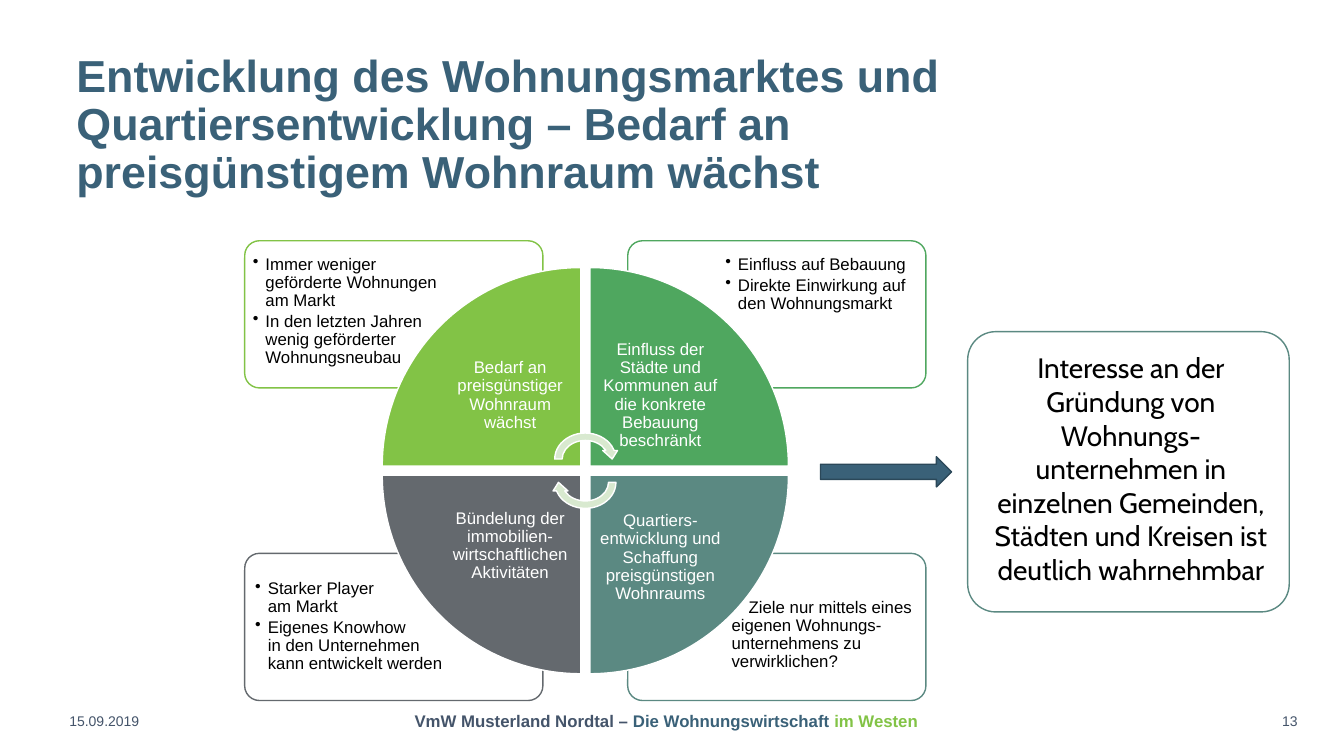
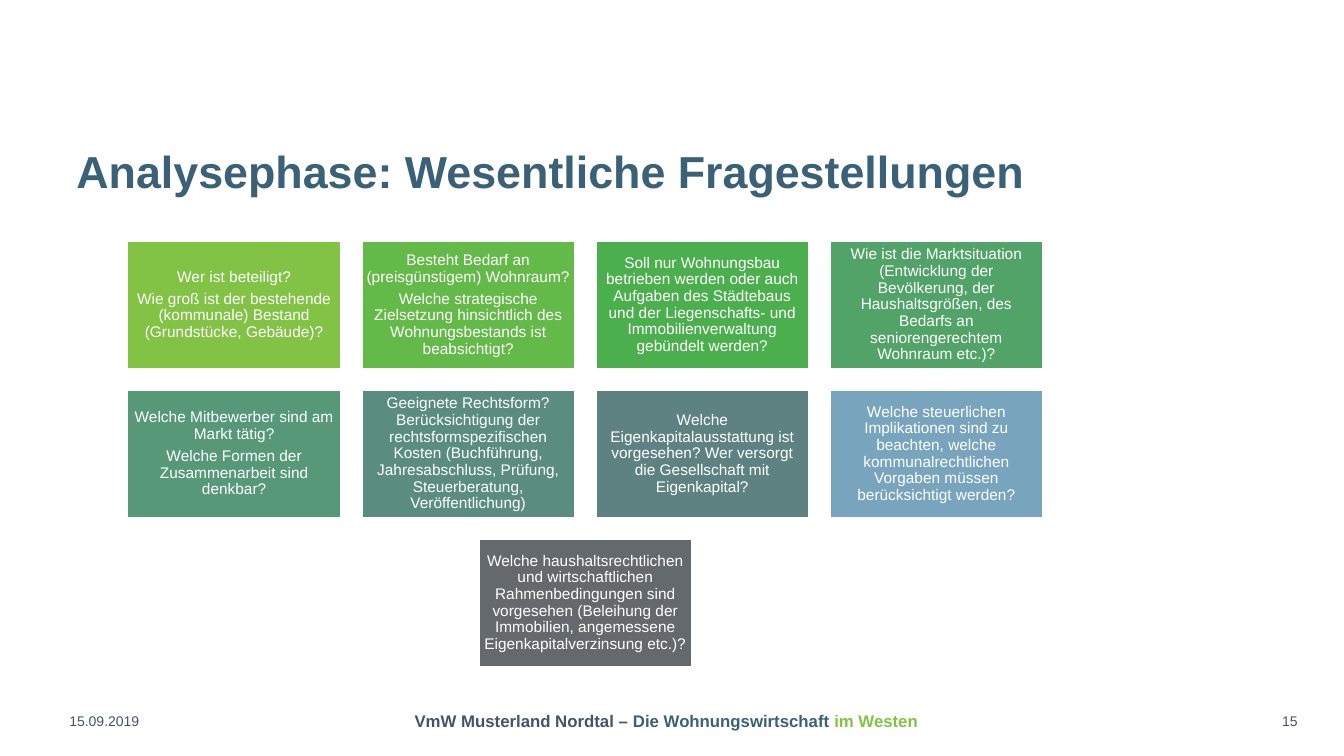
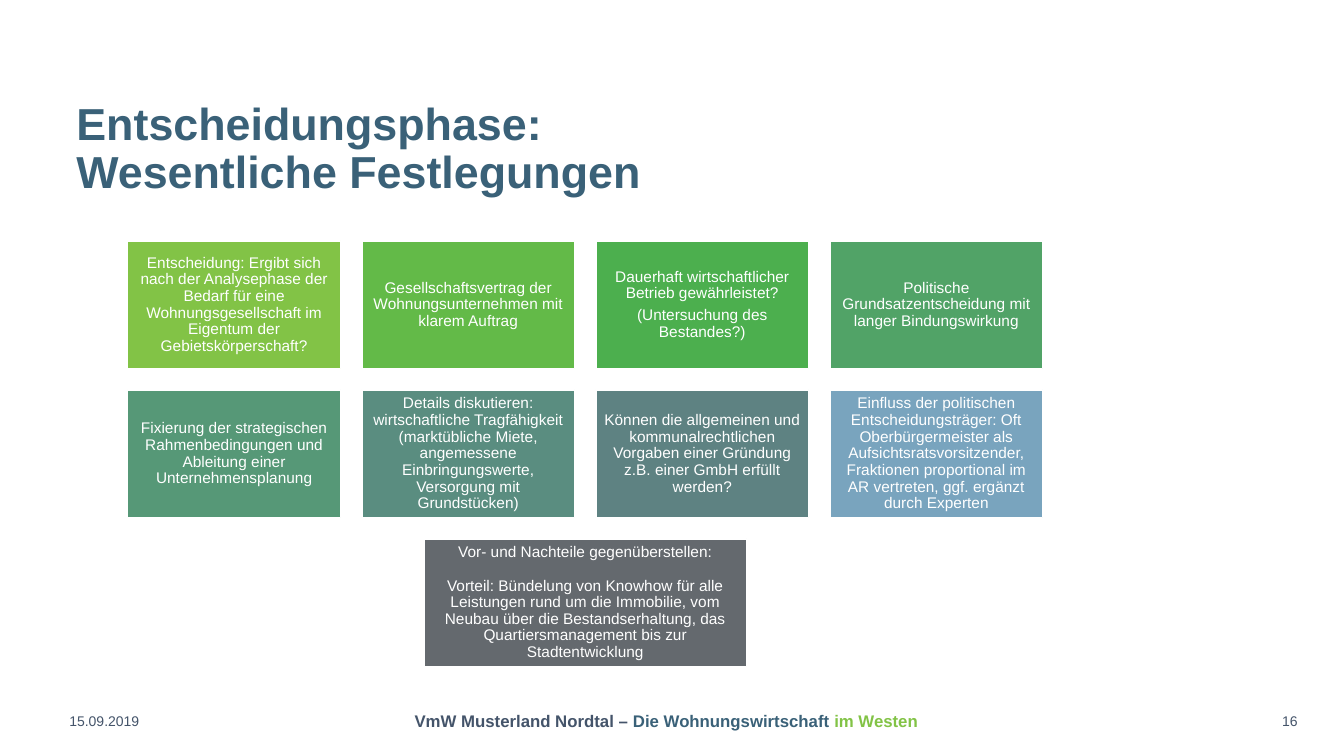
"""Three slides on founding municipal housing companies."""
from copy import deepcopy
from dataclasses import dataclass
from typing import NamedTuple

from lxml.etree import SubElement
from pptx import Presentation
from pptx.dml.color import RGBColor
from pptx.enum.shapes import MSO_SHAPE
from pptx.enum.text import MSO_ANCHOR, PP_ALIGN
from pptx.oxml.ns import qn
from pptx.util import Pt

COLORS = {
    "white": "FFFFFF",
    "black": "000000",
    "slate": "44546A",
    "petrol": "3A6178",
    "petrol_dark": "2B4859",
    "lime": "82C346",
    "leaf": "63BA48",
    "grass": "4CAF4E",
    "green": "4FA75F",
    "fern": "51A367",
    "jade": "569877",
    "sea": "5A8D80",
    "teal": "5B8982",
    "lagoon": "5E8282",
    "sky": "79A4BE",
    "grey": "64696E",
    "mint": "D8E9CF",
}
CARD_COLORS = ("lime", "leaf", "grass", "fern", "jade", "sea", "lagoon", "sky", "grey")
FOOTER_PARTS = (
    ("VmW Musterland Nordtal – ", "slate"),
    ("Die Wohnungswirtschaft ", "petrol"),
    ("im Westen", "lime"),
)
CENTER_X, CENTER_Y = 418.1, 336.2
FOOTER_TOP, FOOTER_HEIGHT = 500.4, 28.8
CARD_WIDTH, CARD_HEIGHT, CARD_GAP, CARD_TOP = 152, 91.2, 15.2, 172.1
CARD_COLUMNS = 4


class Box(NamedTuple):
    """Position and size in points."""

    left: float
    top: float
    width: float
    height: float


class Insets(NamedTuple):
    """Text margins in points."""

    left: float = 7.2
    top: float = 3.6
    right: float = 7.2
    bottom: float = 3.6


@dataclass(frozen=True)
class TextStyle:
    """Look of a text and its paragraphs."""

    size: float
    color: str
    bold: bool = False
    font: str = "Arial"
    align: PP_ALIGN = PP_ALIGN.LEFT
    anchor: MSO_ANCHOR = MSO_ANCHOR.MIDDLE
    line_spacing: float = 1.0
    space_after: float = 0
    margin: float = 0
    indent: float = 0
    bullet: bool = False


@dataclass(frozen=True)
class Quadrant:
    """One wedge of the circle with its label and the note beside it."""

    side_x: int
    side_y: int
    rotation: int
    color: str
    label: str
    notes: tuple[str, ...]
    note_style: TextStyle
    note_insets: Insets
    label_shift: float = 0


@dataclass(frozen=True)
class Card:
    """One question or decision."""

    paragraphs: tuple[str, ...]
    width: float = CARD_WIDTH
    space_after: float = 3.85


TITLE = TextStyle(32, "petrol", bold=True, anchor=MSO_ANCHOR.BOTTOM, line_spacing=0.9)
DATE = TextStyle(10, "slate")
PAGE = TextStyle(10, "slate", align=PP_ALIGN.RIGHT)
LABEL = TextStyle(12, "white", align=PP_ALIGN.CENTER, line_spacing=0.9, space_after=4.2)
CONCLUSION = TextStyle(20, "black", font="Cabin", align=PP_ALIGN.CENTER, anchor=MSO_ANCHOR.TOP)
NOTE_TOP = TextStyle(12, "black", anchor=MSO_ANCHOR.TOP, line_spacing=0.9,
                     space_after=1.8, margin=9, indent=-9, bullet=True)
NOTE_BOTTOM = TextStyle(12, "black", anchor=MSO_ANCHOR.BOTTOM, line_spacing=0.9,
                        space_after=1.8, margin=9, indent=-9, bullet=True)
NOTE_PLAIN = TextStyle(12, "black", anchor=MSO_ANCHOR.TOP, line_spacing=0.9,
                       margin=4.5, indent=12.2)

QUADRANTS = (
    Quadrant(1, 1, 180, "teal",
             "Quartiers-entwicklung und Schaffung preisgünstigen Wohnraums",
             ("Ziele nur mittels eines eigenen Wohnungs-unternehmens zu verwirklichen?",),
             NOTE_PLAIN, Insets(3.6, 3.6, 3.6, 3.6), label_shift=17),
    Quadrant(-1, 1, 270, "grey",
             "Bündelung der immobilien-wirtschaftlichen Aktivitäten",
             ("Starker Player\nam Markt",
              "Eigenes Knowhow\nin den Unternehmen kann entwickelt werden"),
             NOTE_BOTTOM, Insets(5.3, 0, 3.6, 17.3)),
    Quadrant(1, -1, 90, "green",
             "Einfluss der Städte und Kommunen auf die konkrete Bebauung beschränkt",
             ("Einfluss auf Bebauung", "Direkte Einwirkung auf den Wohnungsmarkt"),
             NOTE_TOP, Insets(3.6, 8.6, 3.6, 3.6)),
    Quadrant(-1, -1, 0, "lime",
             "Bedarf an preisgünstiger Wohnraum wächst",
             ("Immer weniger geförderte Wohnungen am Markt",
              "In den letzten Jahren wenig geförderter Wohnungsneubau"),
             NOTE_TOP, Insets(3.6, 8.6, 0, 3.6)),
)

ANALYSIS_CARDS = (
    Card(("Wer ist beteiligt?",
          "Wie groß ist der bestehende (kommunale) Bestand (Grundstücke, Gebäude)?")),
    Card(("Besteht Bedarf an (preisgünstigem) Wohnraum?",
          "Welche strategische Zielsetzung hinsichtlich des Wohnungsbestands ist beabsichtigt?")),
    Card(("Soll nur Wohnungsbau betrieben werden oder auch Aufgaben des Städtebaus und der "
          "Liegenschafts- und Immobilienverwaltung gebündelt werden?",)),
    Card(("Wie ist die Marktsituation (Entwicklung der Bevölkerung, der Haushaltsgrößen, "
          "des Bedarfs an seniorengerechtem Wohnraum etc.)?",)),
    Card(("Welche Mitbewerber sind am Markt tätig?",
          "Welche Formen der Zusammenarbeit sind denkbar?")),
    Card(("Geeignete Rechtsform? Berücksichtigung der rechtsformspezifischen Kosten "
          "(Buchführung, Jahresabschluss, Prüfung, Steuerberatung, Veröffentlichung)",)),
    Card(("Welche Eigenkapitalausstattung ist vorgesehen? Wer versorgt die Gesellschaft "
          "mit Eigenkapital?",)),
    Card(("Welche steuerlichen Implikationen sind zu beachten, welche kommunalrechtlichen "
          "Vorgaben müssen berücksichtigt werden?",)),
    Card(("Welche haushaltsrechtlichen und wirtschaftlichen Rahmenbedingungen sind vorgesehen "
          "(Beleihung der Immobilien, angemessene Eigenkapitalverzinsung etc.)?",)),
)

DECISION_CARDS = (
    Card(("Entscheidung: Ergibt sich nach der Analysephase der Bedarf für eine "
          "Wohnungsgesellschaft im Eigentum der Gebietskörperschaft?",)),
    Card(("Gesellschaftsvertrag der Wohnungsunternehmen mit klarem Auftrag",)),
    Card(("Dauerhaft wirtschaftlicher Betrieb gewährleistet?",
          "(Untersuchung des Bestandes?)")),
    Card(("Politische Grundsatzentscheidung mit langer Bindungswirkung",)),
    Card(("Fixierung der strategischen Rahmenbedingungen und Ableitung einer "
          "Unternehmensplanung",)),
    Card(("Details diskutieren: wirtschaftliche Tragfähigkeit (marktübliche Miete, "
          "angemessene Einbringungswerte, Versorgung mit Grundstücken)",)),
    Card(("Können die allgemeinen und kommunalrechtlichen Vorgaben einer Gründung z.B. "
          "einer GmbH erfüllt werden?",)),
    Card(("Einfluss der politischen Entscheidungsträger: Oft Oberbürgermeister als "
          "Aufsichtsratsvorsitzender, Fraktionen proportional im AR vertreten, "
          "ggf. ergänzt durch Experten",)),
    Card(("Vor- und Nachteile gegenüberstellen:",
          "Vorteil: Bündelung von Knowhow für alle Leistungen rund um die Immobilie, vom "
          "Neubau über die Bestandserhaltung, das Quartiersmanagement bis zur "
          "Stadtentwicklung"), width=230.4, space_after=11.9),
)


def rgb(color: str) -> RGBColor:
    """Return the named colour."""
    return RGBColor.from_string(COLORS[color])


def emu(box: Box) -> list:
    """Return the four lengths of a box for python-pptx."""
    return [Pt(length) for length in box]


def format_run(run, style: TextStyle, color: str) -> None:
    """Give a run its font."""
    run.font.size = Pt(style.size)
    run.font.name = style.font
    run.font.bold = style.bold
    run.font.color.rgb = rgb(color)


def format_paragraph(paragraph, style: TextStyle) -> None:
    """Give a paragraph its spacing, indent and bullet."""
    paragraph.alignment = style.align
    paragraph.line_spacing = style.line_spacing
    paragraph.space_after = Pt(style.space_after)
    properties = paragraph._p.get_or_add_pPr()
    properties.set("marL", str(Pt(style.margin)))
    properties.set("indent", str(Pt(style.indent)))
    if style.bullet:
        SubElement(properties, qn("a:buChar")).set("char", "•")


def prepare_frame(shape, style: TextStyle, insets: Insets):
    """Set wrapping, anchor and margins and return the text frame."""
    frame = shape.text_frame
    frame.word_wrap = True
    frame.vertical_anchor = style.anchor
    frame.margin_left, frame.margin_top, frame.margin_right, frame.margin_bottom = (
        Pt(inset) for inset in insets)
    return frame


def write(shape, texts: tuple[str, ...], style: TextStyle, insets: Insets = Insets()) -> None:
    """Fill a shape with one paragraph for each text."""
    frame = prepare_frame(shape, style, insets)
    for index, text in enumerate(texts):
        paragraph = frame.add_paragraph() if index else frame.paragraphs[0]
        paragraph.text = text
        format_paragraph(paragraph, style)
        for run in paragraph.runs:
            format_run(run, style, style.color)
        for line_break in paragraph._p.findall(qn("a:br")):
            line_break.append(deepcopy(paragraph.runs[0]._r.rPr))


def add_text(slide, box: Box, texts: tuple[str, ...], style: TextStyle,
             insets: Insets = Insets()) -> None:
    """Add a text box."""
    write(slide.shapes.add_textbox(*emu(box)), texts, style, insets)


def add_figure(slide, preset: MSO_SHAPE, box: Box, fill: str, line: str = "white",
               rotation: float = 0):
    """Add a filled and outlined preset shape."""
    figure = slide.shapes.add_shape(preset, *emu(box))
    figure.shadow.inherit = False
    figure.fill.solid()
    figure.fill.fore_color.rgb = rgb(fill)
    figure.line.color.rgb = rgb(line)
    figure.line.width = Pt(1)
    figure.rotation = rotation
    return figure


def add_panel(slide, box: Box, line: str):
    """Add a rounded, slightly transparent white panel."""
    panel = add_figure(slide, MSO_SHAPE.ROUNDED_RECTANGLE, box, "white", line)
    panel.adjustments[0] = 0.1
    fill_color = panel._element.spPr.find(qn("a:solidFill"))[0]
    SubElement(fill_color, qn("a:alpha")).set("val", "90000")
    return panel


def add_slide(deck, title: str, page: int):
    """Add a slide with its title and footer."""
    slide = deck.slides.add_slide(deck.slide_layouts[6])
    add_text(slide, Box(42.5, FOOTER_TOP, 74.2, FOOTER_HEIGHT), ("15.09.2019",), DATE)
    add_text(slide, Box(866.9, FOOTER_TOP, 67, FOOTER_HEIGHT), (str(page),), PAGE)
    slogan_style = TextStyle(12, "slate", bold=True, align=PP_ALIGN.CENTER)
    slogan = slide.shapes.add_textbox(*emu(Box(272.9, FOOTER_TOP, 406, FOOTER_HEIGHT)))
    paragraph = prepare_frame(slogan, slogan_style, Insets()).paragraphs[0]
    format_paragraph(paragraph, slogan_style)
    for text, color in FOOTER_PARTS:
        run = paragraph.add_run()
        run.text = text
        format_run(run, slogan_style, color)
    add_text(slide, Box(47.5, 27.4, 741.6, 118), (title,), TITLE)
    return slide


def quadrant_box(quadrant: Quadrant, gap_x: float, gap_y: float,
                 width: float, height: float) -> Box:
    """Place a box in a quadrant at the given distances from the circle's centre."""
    left = CENTER_X + (gap_x if quadrant.side_x > 0 else -gap_x - width)
    top = CENTER_Y + (gap_y if quadrant.side_y > 0 else -gap_y - height)
    return Box(left, top, width, height)


def draw_cycle(slide) -> None:
    """Draw the four-part circle with its notes and turning arrows."""
    for quadrant in QUADRANTS:
        add_panel(slide, quadrant_box(quadrant, 30.3, 59.1, 213, 105.1), quadrant.color)
        add_text(slide, quadrant_box(quadrant, 96.4, 87.8, 144.7, 74.2),
                 quadrant.notes, quadrant.note_style, quadrant.note_insets)
    for quadrant in QUADRANTS:
        add_figure(slide, MSO_SHAPE.PIE_WEDGE, quadrant_box(quadrant, 3.25, 3.25, 141.8, 141.8),
                   quadrant.color, rotation=quadrant.rotation)
        add_text(slide, quadrant_box(quadrant, 3.25, 3.25, 100.8, 100.8), (quadrant.label,),
                 LABEL, Insets(6.7, 6.7 + quadrant.label_shift, 6.7, 6.7))
    width, height, offset = 49, 42.5, 8.3
    for side, rotation in ((-1, 0), (1, 180)):
        turn_box = Box(CENTER_X - width / 2, CENTER_Y + side * offset - height / 2, width, height)
        add_figure(slide, MSO_SHAPE.CIRCULAR_ARROW, turn_box, "mint", rotation=rotation)


def draw_conclusion(slide) -> None:
    """Draw the arrow and the conclusion it leads to."""
    conclusion = add_panel(slide, Box(691.2, 236.9, 229.7, 200.2), "teal")
    write(conclusion, ("Interesse an der Gründung von Wohnungs-unternehmen in einzelnen "
                       "Gemeinden, Städten und Kreisen ist deutlich wahrnehmbar",),
          CONCLUSION, Insets(4.3, 7.9, 0.7, 0))
    add_figure(slide, MSO_SHAPE.RIGHT_ARROW, Box(586.1, 326.2, 93.6, 21.6),
               "petrol", "petrol_dark")


def draw_cards(slide, cards: tuple[Card, ...]) -> None:
    """Draw the cards in centred rows."""
    for start in range(0, len(cards), CARD_COLUMNS):
        row = cards[start:start + CARD_COLUMNS]
        row_width = sum(card.width for card in row) + CARD_GAP * (len(row) - 1)
        left = CENTER_X - row_width / 2
        top = CARD_TOP + start // CARD_COLUMNS * (CARD_HEIGHT + CARD_GAP)
        for card, color in zip(row, CARD_COLORS[start:]):
            figure = add_figure(slide, MSO_SHAPE.RECTANGLE,
                                Box(left, top, card.width, CARD_HEIGHT), color)
            style = TextStyle(11, "white", align=PP_ALIGN.CENTER, line_spacing=0.9,
                              space_after=card.space_after)
            write(figure, card.paragraphs, style, Insets(3.3, 3.3, 3.3, 3.3))
            left += card.width + CARD_GAP


def main() -> None:
    """Build and save the presentation."""
    deck = Presentation()
    deck.slide_width, deck.slide_height = Pt(960), Pt(540)
    market = add_slide(deck, "Entwicklung des Wohnungsmarktes und Quartiersentwicklung – "
                             "Bedarf an preisgünstigem Wohnraum wächst", 13)
    draw_cycle(market)
    draw_conclusion(market)
    draw_cards(add_slide(deck, "Analysephase: Wesentliche Fragestellungen", 15), ANALYSIS_CARDS)
    draw_cards(add_slide(deck, "Entscheidungsphase:\nWesentliche Festlegungen", 16),
               DECISION_CARDS)
    deck.save("out.pptx")


if __name__ == "__main__":
    main()
